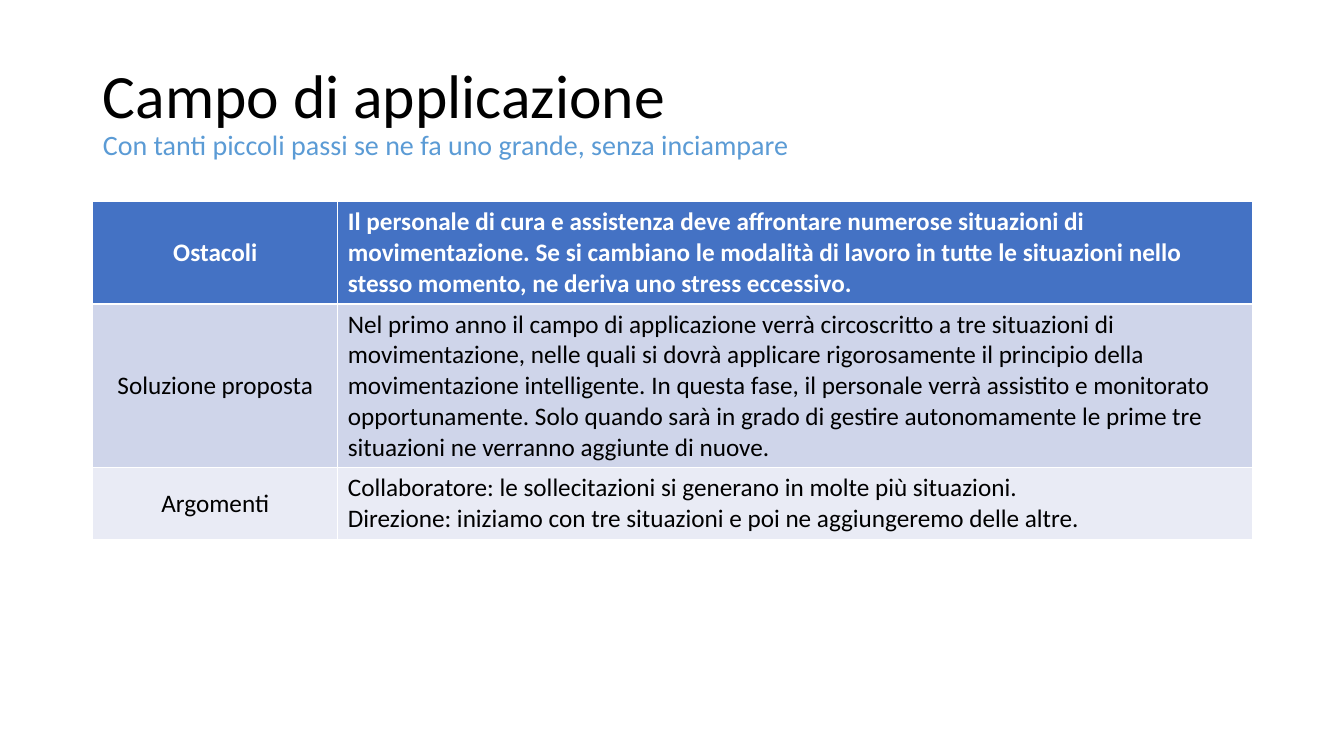
from dataclasses import dataclass

from pptx import Presentation
from pptx import util as u
from pptx.dml.color import RGBColor
from pptx.enum import text as t

FONT = "Calibri"
HEX = {
    "black": "000000",
    "white": "FFFFFF",
    "sky": "5B9BD5",
    "head": "4472C4",
    "dark": "CFD5EA",
    "light": "E9EBF5",
}
LEFT, WIDTH = u.Inches(0.92), u.Inches(11.5)
COLS = (2.43, 9.07)


@dataclass
class Row:
    label: str
    lines: list[str]
    fill: str
    ink: str = "black"
    bold: bool = False


ROWS = [
    Row(
        "Ostacoli",
        ["Il personale di cura e assistenza deve affrontare numerose situazioni di "
         "movimentazione. Se si cambiano le modalità di lavoro in tutte le situazioni "
         "nello stesso momento, ne deriva uno stress eccessivo."],
        "head", "white", True,
    ),
    Row(
        "Soluzione proposta",
        ["Nel primo anno il campo di applicazione verrà circoscritto a tre situazioni di "
         "movimentazione, nelle quali si dovrà applicare rigorosamente il principio della "
         "movimentazione intelligente. In questa fase, il personale verrà assistito e "
         "monitorato opportunamente. Solo quando sarà in grado di gestire autonomamente "
         "le prime tre situazioni ne verranno aggiunte di nuove."],
        "dark",
    ),
    Row(
        "Argomenti",
        ["Collaboratore: le sollecitazioni si generano in molte più situazioni.",
         "Direzione: iniziamo con tre situazioni e poi ne aggiungeremo delle altre."],
        "light",
    ),
]


def color(name: str) -> RGBColor:
    return RGBColor.from_string(HEX[name])


def add_run(para, words: str, size: int, ink: str, bold: bool = False) -> None:
    run = para.add_run()
    run.text = words
    font = run.font
    font.name, font.size, font.bold = FONT, u.Pt(size), bold
    font.color.rgb = color(ink)


def add_title(slide) -> None:
    title = slide.shapes.title
    title.left, title.top = LEFT, u.Inches(0.4)
    title.width, title.height = WIDTH, u.Inches(1.45)
    frame = title.text_frame
    frame.word_wrap = True
    frame.auto_size = t.MSO_AUTO_SIZE.NONE
    frame.vertical_anchor = t.MSO_ANCHOR.MIDDLE
    para = frame.paragraphs[0]
    para.alignment = t.PP_ALIGN.LEFT
    para.line_spacing = 0.9
    add_run(para, "Campo di applicazione", 44, "black")
    para.add_line_break()
    add_run(para, "Con tanti piccoli passi se ne fa uno grande, senza inciampare", 20, "sky")


def fill_cell(cell, lines: list[str], row: Row, align: t.PP_ALIGN) -> None:
    cell.fill.solid()
    cell.fill.fore_color.rgb = color(row.fill)
    cell.vertical_anchor = t.MSO_ANCHOR.MIDDLE
    frame = cell.text_frame
    for i, line in enumerate(lines):
        para = frame.add_paragraph() if i else frame.paragraphs[0]
        para.alignment = align
        add_run(para, line, 18, row.ink, row.bold)


def add_grid(slide) -> None:
    high = u.Inches(3.3)
    shape = slide.shapes.add_table(len(ROWS), len(COLS), LEFT, u.Inches(2), WIDTH, high)
    table = shape.table
    for col, wide in zip(table.columns, COLS):
        col.width = u.Inches(wide)
    for i, row in enumerate(ROWS):
        table.rows[i].height = u.Inches(0.41)  # rows grow to fit their text
        fill_cell(table.cell(i, 0), [row.label], row, t.PP_ALIGN.CENTER)
        fill_cell(table.cell(i, 1), row.lines, row, t.PP_ALIGN.LEFT)
    shape.height = high


def main() -> None:
    deck = Presentation()
    deck.slide_width, deck.slide_height = u.Inches(13.33), u.Inches(7.5)
    slide = deck.slides.add_slide(deck.slide_layouts.get_by_name("Title Only"))
    add_title(slide)
    add_grid(slide)
    deck.save("out.pptx")


if __name__ == "__main__":
    main()
